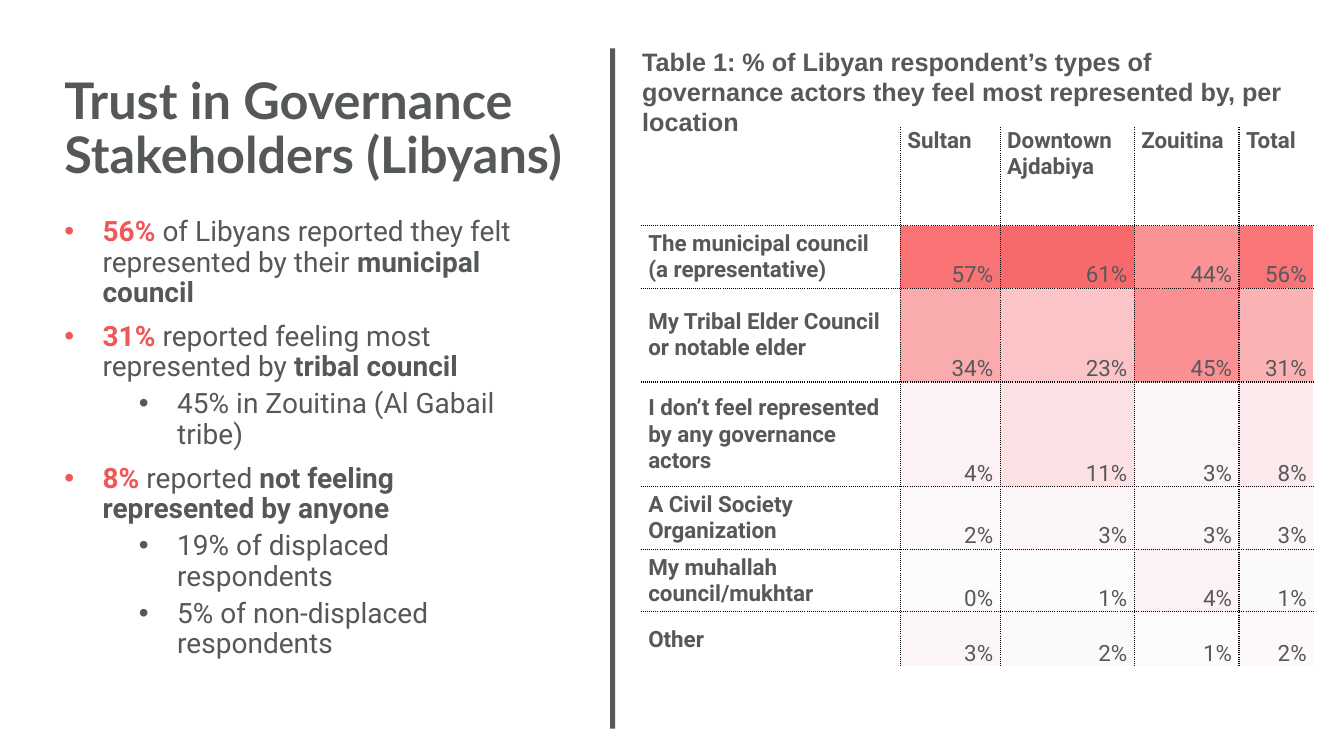
from collections import namedtuple

from lxml.etree import SubElement
from pptx import Presentation
from pptx.dml.color import RGBColor
from pptx.enum.shapes import MSO_SHAPE as Shape
from pptx.enum.text import MSO_ANCHOR as Anchor, PP_ALIGN as Align
from pptx.oxml import parse_xml
from pptx.oxml.ns import nsdecls, qn
from pptx.util import Inches, Pt

WIDTH, HEIGHT = Inches(13.33), Inches(7.5)
GREY, TABLE_GREY, RED = "555859", "58585A", "EF5859"
Box = namedtuple("Box", "left top width height")

# Each bullet: level, then (text, bold, colour) pieces
FINDINGS = [
    (0, [("56% ", True, RED),
         ("of Libyans reported they felt represented by their ", False, GREY),
         ("municipal council", True, GREY)]),
    (0, [("31% ", True, RED),
         ("reported feeling most represented by ", False, GREY),
         ("tribal council", True, GREY)]),
    (1, [("45% in Zouitina (Al Gabail tribe)", False, GREY)]),
    (0, [("8% ", True, RED),
         ("reported ", False, GREY),
         ("not feeling represented by anyone", True, GREY)]),
    (1, [("19% of displaced respondents", False, GREY)]),
    (1, [("5% of non-displaced respondents", False, GREY)]),
]

LOCATIONS = ["", "Sultan", "Downtown Ajdabiya", "Zouitina", "Total"]
COLUMN_WEIGHTS = [2.57, 0.99, 1.33, 1.04, 0.74]
ROW_WEIGHTS = [0.97, 0.62, 0.93, 1.04, 0.62, 0.62, 0.55]
# Each row: actor, percentages, heat colours
ACTORS = [
    ("The municipal council (a representative)",
     [57, 61, 44, 56], ["F97375", "F8696B", "FA9395", "F97577"]),
    ("My Tribal Elder Council or notable elder",
     [34, 23, 45, 31], ["FAABAE", "FBC4C7", "FA9093", "FAB2B4"]),
    ("I don’t feel represented by any governance actors",
     [4, 11, 3, 8], ["FCF2F5", "FCE1E4", "FCF5F8", "FCE9EC"]),
    ("A Civil Society Organization",
     [2, 3, 3, 3], ["FCF7FA", "FCF6F9", "FCF5F8", "FCF6F9"]),
    ("My muhallah council/mukhtar",
     [0, 1, 4, 1], ["FCFCFF", "FCFBFE", "FCF2F5", "FCF9FC"]),
    ("Other",
     [3, 2, 1, 2], ["FCF5F8", "FCF9FC", "FCFAFD", "FCF8FB"]),
]


def share(left, top, width, height):
    """Turn percentages of the slide's size into a box."""
    return Box(int(WIDTH * left / 100), int(HEIGHT * top / 100),
               int(WIDTH * width / 100), int(HEIGHT * height / 100))


def color(value):
    return RGBColor.from_string(value)


def style(font, name, size, value, bold):
    font.name, font.size, font.bold = name, Pt(size), bold
    font.color.rgb = color(value)


def add_divider(page, box):
    bar = page.shapes.add_shape(Shape.RECTANGLE, *box)
    bar.shadow.inherit = False
    bar.fill.solid()
    bar.fill.fore_color.rgb = color(GREY)
    bar.line.fill.background()


def add_text(page, box):
    frame = page.shapes.add_textbox(*box).text_frame
    frame.word_wrap = True
    return frame


def add_heading(page, box, text, font_name, size, value, line_spacing):
    para = add_text(page, box).paragraphs[0]
    para.text = text
    para.line_spacing = line_spacing
    style(para.runs[0].font, font_name, size, value, True)


def add_findings(page, box):
    frame = add_text(page, box)
    for index, (level, pieces) in enumerate(FINDINGS):
        para = frame.add_paragraph() if index else frame.paragraphs[0]
        para.level = level
        para.line_spacing = 0.9
        para.space_before = Pt((10, 5)[level] if index else 0)
        properties = para._p.get_or_add_pPr()
        properties.set("marL", str(Inches((0.38, 1.12)[level])))
        properties.set("indent", str(Inches(-0.38)))
        SubElement(properties, qn("a:buFont")).set("typeface", "Arial")
        SubElement(properties, qn("a:buChar")).set("char", "•")
        for text, bold, value in pieces:
            span = para.add_run()
            span.text = text
            style(span.font, "Roboto", 20, value, bold)


def add_dotted_borders(cell, sides):
    properties = cell._tc.get_or_add_tcPr()
    for index, side in enumerate(sides):
        properties.insert(index, parse_xml(
            f'<a:ln{side} {nsdecls("a")} w="12700"><a:solidFill>'
            '<a:srgbClr val="000000"/></a:solidFill>'
            f'<a:prstDash val="sysDot"/></a:ln{side}>'))


def fill_cell(cell, text, bold, anchor, align, heat=None):
    cell.margin_left = cell.margin_right = Inches(0.07)
    cell.margin_top = cell.margin_bottom = 0
    cell.vertical_anchor = anchor
    if heat:
        cell.fill.solid()
        cell.fill.fore_color.rgb = color(heat)
    else:
        cell.fill.background()
    para = cell.text_frame.paragraphs[0]
    para.text = text
    para.alignment = align
    for span in para.runs:
        style(span.font, "Roboto", 16, TABLE_GREY, bold)


def add_heat_table(page, box):
    row_count, column_count = len(ROW_WEIGHTS), len(COLUMN_WEIGHTS)
    table = page.shapes.add_table(row_count, column_count, *box).table
    table.first_row = table.horz_banding = False
    for column, weight in zip(table.columns, COLUMN_WEIGHTS):
        column.width = int(box.width * weight / sum(COLUMN_WEIGHTS))
    for row, weight in zip(table.rows, ROW_WEIGHTS):
        row.height = int(box.height * weight / sum(ROW_WEIGHTS))

    for column, location in enumerate(LOCATIONS):
        fill_cell(table.cell(0, column), location, True, Anchor.TOP, Align.LEFT)
    for row, (actor, percentages, heats) in enumerate(ACTORS, 1):
        fill_cell(table.cell(row, 0), actor, True, Anchor.MIDDLE, Align.LEFT)
        for column, (value, heat) in enumerate(zip(percentages, heats), 1):
            fill_cell(table.cell(row, column), f"{value}%", False,
                      Anchor.BOTTOM, Align.RIGHT, heat)

    for row in range(row_count):
        for column in range(column_count):
            inner = {"L": column > 0, "R": column < column_count - 1,
                     "T": row > 0, "B": row < row_count - 1}
            add_dotted_borders(table.cell(row, column),
                               [side for side in inner if inner[side]])


def build_trust_slide(deck):
    page = deck.slides.add_slide(deck.slide_layouts[6])
    add_divider(page, share(45.39, 6.4, 0.38, 90))
    add_heading(page, share(4.05, 9.33, 40.13, 8.53),
                "Trust in Governance Stakeholders (Libyans)",
                "Lato", 36, GREY, 0.9)
    add_findings(page, share(4.05, 28.13, 37.13, 62.53))
    add_heat_table(page, share(47.71, 16.93, 50.04, 71.33))
    add_heading(page, share(47.04, 5.47, 50.04, 9.47),
                "Table 1: % of Libyan respondent’s types of governance actors "
                "they feel most represented by, per location",
                "Arial", 18, TABLE_GREY, 1.0)


def main():
    deck = Presentation()
    deck.slide_width, deck.slide_height = WIDTH, HEIGHT
    build_trust_slide(deck)
    deck.save("out.pptx")


if __name__ == "__main__":
    main()
